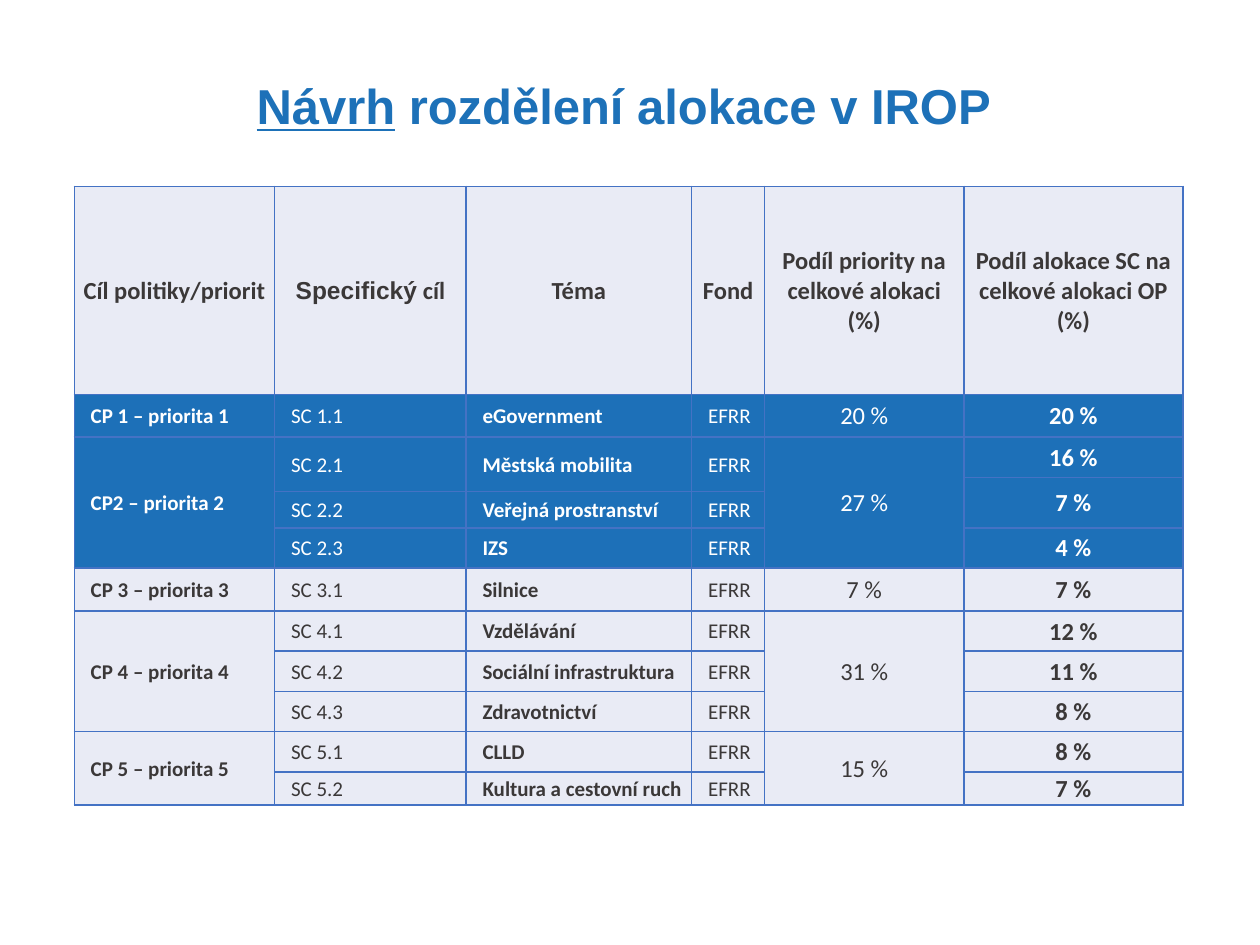
import pptx
import pptx.dml.color
import pptx.enum.text
import pptx.oxml
import pptx.oxml.ns
import pptx.util

Inches = pptx.util.Inches
Pt = pptx.util.Pt
RGBColor = pptx.dml.color.RGBColor
ALIGN = pptx.enum.text.PP_ALIGN
MIDDLE = pptx.enum.text.MSO_ANCHOR.MIDDLE

TITLE = RGBColor(0x1D, 0x71, 0xB8)
BLUE = RGBColor(0x1D, 0x70, 0xB8)
PALE = RGBColor(0xE9, 0xEB, 0xF5)
DARK = RGBColor(0x3B, 0x38, 0x38)
WHITE = RGBColor(0xFF, 0xFF, 0xFF)
LINE = RGBColor(0x44, 0x72, 0xC4)

HEAD = {"name": "Calibri", "size": Pt(14), "bold": True}
LABEL = {"name": "Calibri", "size": Pt(12), "bold": True}
PLAIN = {"name": "Calibri", "size": Pt(12), "bold": False}
SHARE = {"name": "Calibri", "size": Pt(14), "bold": False}

COLS = [1.59, 1.52, 1.79, 0.58, 1.58, 1.74]
ROWS = [1.65, 0.34, 0.32, 0.11, 0.29, 0.32, 0.34, 0.32, 0.32, 0.32, 0.32, 0.26]
HEADS = [
    [[("Cíl politiky/priorit", "Calibri")]],
    [[("Specifický", "Arial"), (" cíl", "Calibri")]],
    [[("Téma", "Calibri")]],
    [[("Fond", "Calibri")]],
    [[("Podíl priority na celkové alokaci", "Calibri")], [("(%)", "Calibri")]],
    [[("Podíl alokace SC na celkové alokaci OP (%)", "Calibri")]],
]
# Each goal: code, theme, share, rows of its name, rows of its share
GROUPS = [
    ("CP 1 – priorita 1", "20 %", BLUE, WHITE, [("SC 1.1", "eGovernment", "20 %", 1, 1)]),
    ("CP2 – priorita 2", "27 %", BLUE, WHITE, [
        ("SC 2.1", "Městská mobilita", "16 %", 2, 1),
        ("SC 2.2", "Veřejná prostranství", "7 %", 1, 2),
        ("SC 2.3", "IZS", "4 %", 1, 1)]),
    ("CP 3 – priorita 3", "7 %", PALE, DARK, [("SC 3.1", "Silnice", "7 %", 1, 1)]),
    ("CP 4 – priorita 4", "31 %", PALE, DARK, [
        ("SC 4.1", "Vzdělávání", "12 %", 1, 1),
        ("SC 4.2", "Sociální infrastruktura", "11 %", 1, 1),
        ("SC 4.3", "Zdravotnictví", "8 %", 1, 1)]),
    ("CP 5 – priorita 5", "15 %", PALE, DARK, [
        ("SC 5.1", "CLLD", "8 %", 1, 1),
        ("SC 5.2", "Kultura a cestovní ruch", "7 %", 1, 1)]),
]


def apply(item, form):
    for key, val in form.items():
        setattr(item, key, val)


def add_run(para, text, form, ink):
    run = para.add_run()
    run.text = text
    apply(run.font, form)
    run.font.color.rgb = ink


def add_title(slide, box):
    title = slide.shapes.title
    apply(title, dict(zip(("left", "top", "width", "height"), box)))
    apply(title.text_frame, {
        "vertical_anchor": MIDDLE, "word_wrap": True,
        "auto_size": pptx.enum.text.MSO_AUTO_SIZE.NONE})
    para = title.text_frame.paragraphs[0]
    apply(para, {"alignment": ALIGN.CENTER, "line_spacing": 0.9})
    form = {"name": "Arial", "size": Pt(28), "bold": True}
    add_run(para, "Návrh", {**form, "underline": True}, TITLE)
    add_run(para, " rozdělení alokace v IROP ", {**form, "underline": False}, TITLE)


def style_cell(cell):
    props = cell._tc.get_or_add_tcPr()
    for side in "LRTB":
        props.append(pptx.oxml.parse_xml(
            f'<a:ln{side} {pptx.oxml.ns.nsdecls("a")} w="{Pt(1)}">'
            f'<a:solidFill><a:srgbClr val="{LINE}"/></a:solidFill></a:ln{side}>'))
    slim = Inches(0.01)
    apply(cell, {"vertical_anchor": MIDDLE, "margin_left": slim, "margin_top": slim,
                 "margin_right": slim, "margin_bottom": 0})


def paint(cell, back):
    cell.fill.solid()
    cell.fill.fore_color.rgb = back


def put(grid, row, col, span, text, form, look):
    back, ink = look
    cell = grid.cell(row, col)
    if span > 1:
        cell.merge(grid.cell(row + span - 1, col))
    for step in range(span):
        paint(grid.cell(row + step, col), back)
    para = cell.text_frame.paragraphs[0]
    if col < 4:
        para._p.get_or_add_pPr().set("marL", str(Inches(0.12)))
    else:
        para.alignment = ALIGN.CENTER
    add_run(para, text, form, ink)


def add_heads(grid):
    for col, lines in enumerate(HEADS):
        cell = grid.cell(0, col)
        paint(cell, PALE)
        frame = cell.text_frame
        for num, runs in enumerate(lines):
            para = frame.add_paragraph() if num else frame.paragraphs[0]
            para.alignment = ALIGN.CENTER
            for text, face in runs:
                add_run(para, text, {**HEAD, "name": face}, DARK)


def add_groups(grid):
    top = 1
    for name, total, back, ink, goals in GROUPS:
        look = (back, ink)
        span = sum(goal[3] for goal in goals)
        put(grid, top, 0, span, name, LABEL, look)
        put(grid, top, 4, span, total, SHARE, look)
        left = right = top
        for code, theme, share, tall, deep in goals:
            put(grid, left, 1, tall, code, PLAIN, look)
            put(grid, left, 2, tall, theme, LABEL, look)
            put(grid, left, 3, tall, "EFRR", PLAIN, look)
            put(grid, right, 5, deep, share, HEAD, look)
            left += tall
            right += deep
        top += span


def add_grid(slide, box):
    grid = slide.shapes.add_table(len(ROWS), len(COLS), *box).table
    apply(grid, {"first_row": False, "horz_banding": False})
    for col, wide in zip(grid.columns, COLS):
        col.width = Inches(wide)
    for row, high in zip(grid.rows, ROWS):
        row.height = Inches(high)
    for cell in grid.iter_cells():
        style_cell(cell)
    add_heads(grid)
    add_groups(grid)
    for cell in grid.iter_cells():
        if cell.is_spanned:
            cell.text_frame.paragraphs[0]._p.append(pptx.oxml.parse_xml(
                f'<a:endParaRPr {pptx.oxml.ns.nsdecls("a")} sz="100"/>'))


def main():
    deck = pptx.Presentation()
    apply(deck, {"slide_width": Inches(10), "slide_height": Inches(7.5)})
    slide = deck.slides.add_slide(deck.slide_layouts[5])
    add_title(slide, [Inches(n) for n in (0.69, 0.4, 8.62, 0.93)])
    add_grid(slide, [Inches(n) for n in (0.59, 1.48, sum(COLS), sum(ROWS))])
    deck.save("out.pptx")


if __name__ == "__main__":
    main()
